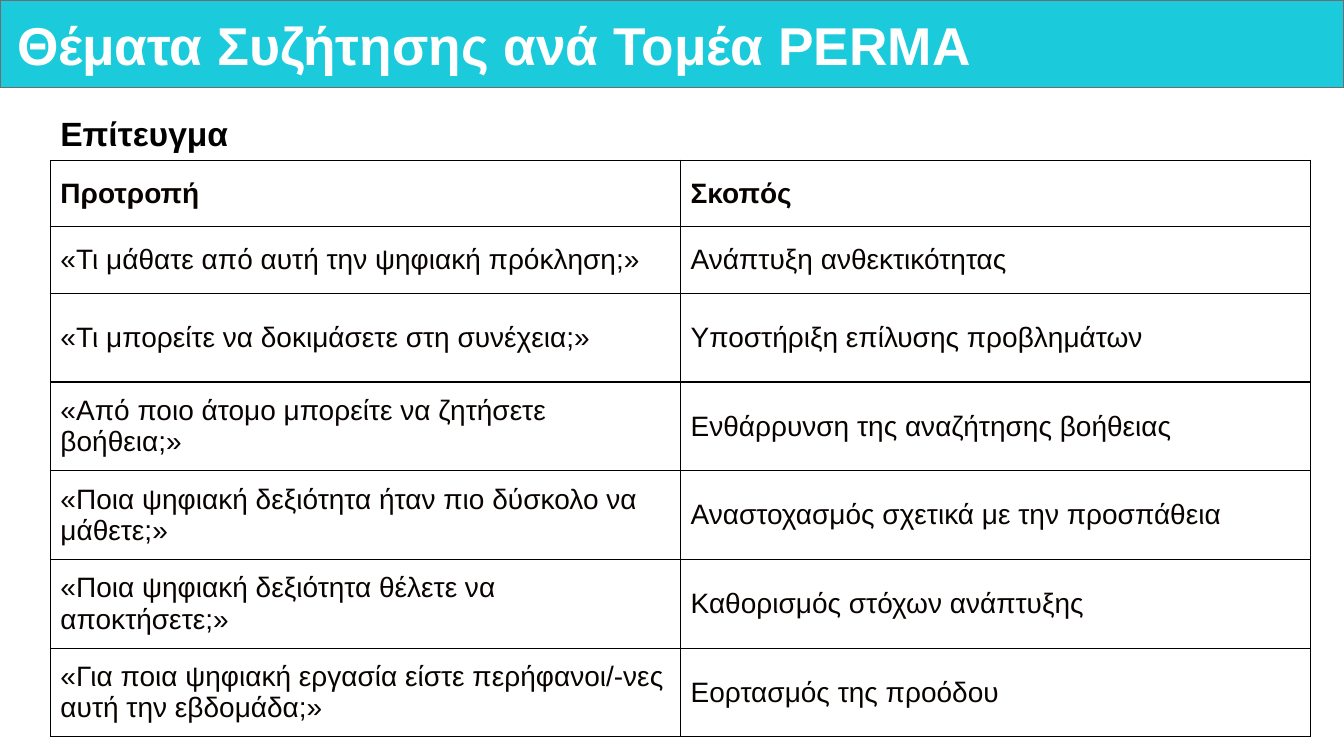
from lxml import etree
from pptx import Presentation
from pptx.dml.color import RGBColor
from pptx.enum.shapes import MSO_SHAPE
from pptx.enum.text import MSO_ANCHOR
from pptx.oxml.ns import qn
from pptx.util import Inches, Pt

RECTANGLE = MSO_SHAPE.RECTANGLE
TOP, MIDDLE = MSO_ANCHOR.TOP, MSO_ANCHOR.MIDDLE
COLORS = {"band": "1BCBDC", "band_line": "6C6E70", "title": "FFFFFF",
          "heading": "000000", "cell": "080301", "border": "000000"}
BORDER_SIDES = ("a:lnL", "a:lnR", "a:lnT", "a:lnB")
ROW_HEIGHTS = [0.66] * 2 + [0.88] * 5
PROMPTS = [
    ("Προτροπή", "Σκοπός"),
    ("«Τι μάθατε από αυτή την ψηφιακή πρόκληση;»", "Ανάπτυξη ανθεκτικότητας"),
    ("«Τι μπορείτε να δοκιμάσετε στη συνέχεια;»", "Υποστήριξη επίλυσης προβλημάτων"),
    ("«Από ποιο άτομο μπορείτε να ζητήσετε βοήθεια;»", "Ενθάρρυνση της αναζήτησης βοήθειας"),
    ("«Ποια ψηφιακή δεξιότητα ήταν πιο δύσκολο να μάθετε;»",
     "Αναστοχασμός σχετικά με την προσπάθεια"),
    ("«Ποια ψηφιακή δεξιότητα θέλετε να αποκτήσετε;»", "Καθορισμός στόχων ανάπτυξης"),
    ("«Για ποια ψηφιακή εργασία είστε περήφανοι/-νες αυτή την εβδομάδα;»",
     "Εορτασμός της προόδου"),
]


def color(name):
    return RGBColor.from_string(COLORS[name])


class SlideBuilder:
    def __init__(self, slide, font="Arial"):
        self.slide = slide
        self.font = font

    def add_span(self, frame, text, size, color_name, bold, spacing=None):
        para = frame.paragraphs[0]
        para.line_spacing = spacing
        span = para.add_run()
        span.text = text
        formats = {"name": self.font, "size": Pt(size), "bold": bold}
        for name, value in formats.items():
            setattr(span.font, name, value)
        span.font.color.rgb = color(color_name)

    def band(self, left, top, width, height):
        shape = self.slide.shapes.add_shape(
            RECTANGLE, *map(Inches, (left, top, width, height)))
        shape.shadow.inherit = False
        shape.fill.solid()
        shape.fill.fore_color.rgb = color("band")
        shape.line.color.rgb = color("band_line")
        shape.line.width = Pt(1)

    def text(self, place, text, size, color_name, anchor=TOP, insets=(0.1, 0.05), spacing=None):
        box = self.slide.shapes.add_textbox(*map(Inches, place))
        across, down = map(Inches, insets)
        formats = {"word_wrap": True, "vertical_anchor": anchor,
                   "margin_left": across, "margin_right": across,
                   "margin_top": down, "margin_bottom": down}
        for name, value in formats.items():
            setattr(box.text_frame, name, value)
        self.add_span(box.text_frame, text, size, color_name, True, spacing)

    def border(self, cell):
        properties = cell._tc.get_or_add_tcPr()
        for side in BORDER_SIDES:
            line = etree.SubElement(properties, qn(side), w=str(Pt(1)))
            fill = etree.SubElement(line, qn("a:solidFill"))
            etree.SubElement(fill, qn("a:srgbClr"), val=COLORS["border"])

    def table(self, left, top, width, rows, heights):
        columns = len(rows[0])
        table = self.slide.shapes.add_table(
            len(rows), columns, *map(Inches, (left, top, width, sum(heights)))).table
        table.horz_banding = False
        for column in table.columns:
            column.width = Inches(width / columns)
        for row_index, (texts, height) in enumerate(zip(rows, heights)):
            table.rows[row_index].height = Inches(height)
            for cell, text in zip(table.rows[row_index].cells, texts):
                cell.vertical_anchor = MIDDLE
                self.border(cell)
                cell.fill.background()
                self.add_span(cell.text_frame, text, 20, "cell", row_index == 0)


def main():
    deck = Presentation()
    deck.slide_width, deck.slide_height = Inches(13.33), Inches(7.5)
    page = SlideBuilder(deck.slides.add_slide(deck.slide_layouts[6]))
    page.band(0, 0, 13.33, 0.87)
    page.text((0.11, 0.09, 13.06, 0.78), "Θέματα Συζήτησης ανά Τομέα PERMA", 38,
              "title", MIDDLE, (0.06, 0.06), 0.9)
    page.table(0.5, 1.59, 12.5, PROMPTS, ROW_HEIGHTS)
    page.text((0.5, 1.07, 6.76, 0.5), "Επίτευγμα", 24, "heading")
    deck.save("out.pptx")


if __name__ == "__main__":
    main()
